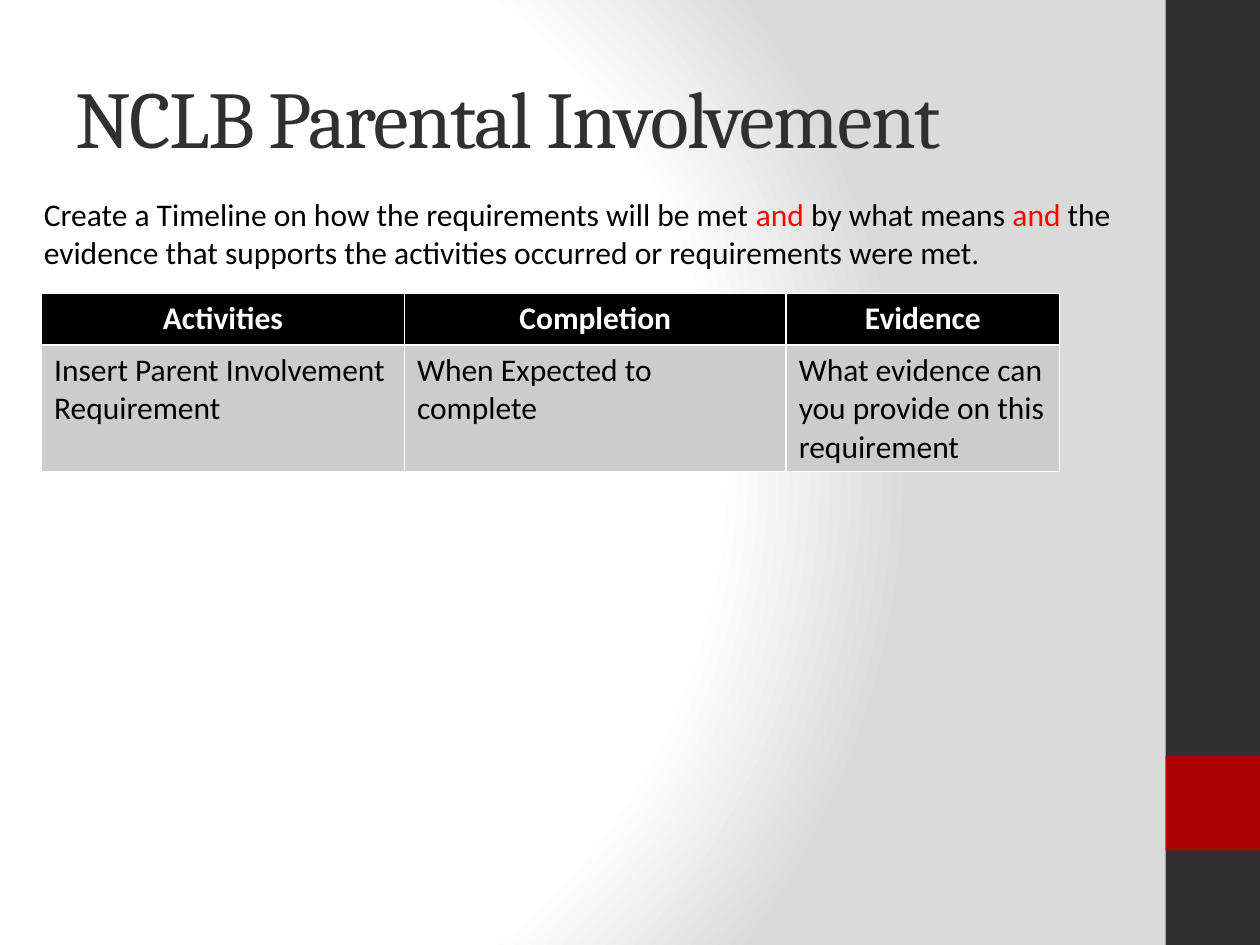
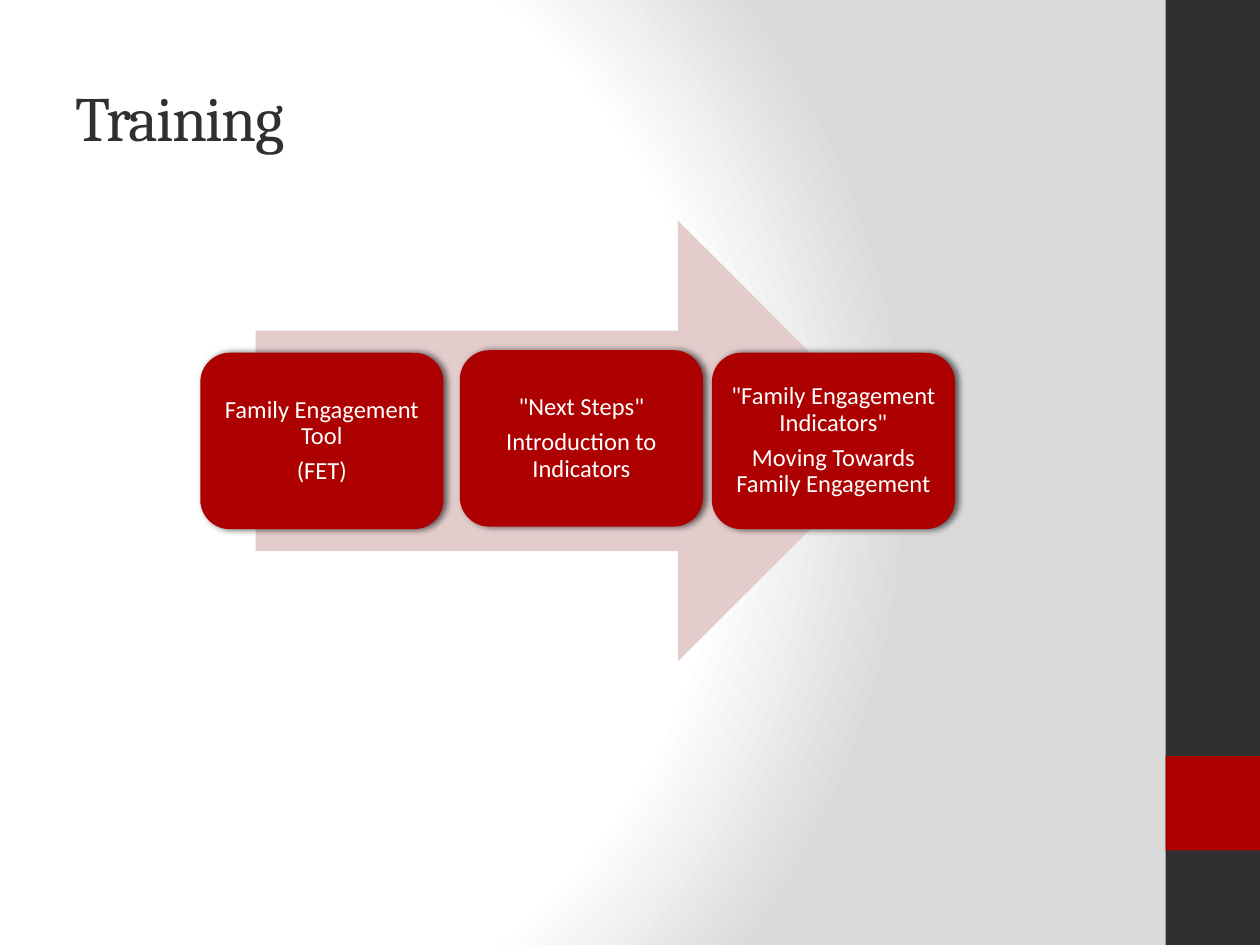
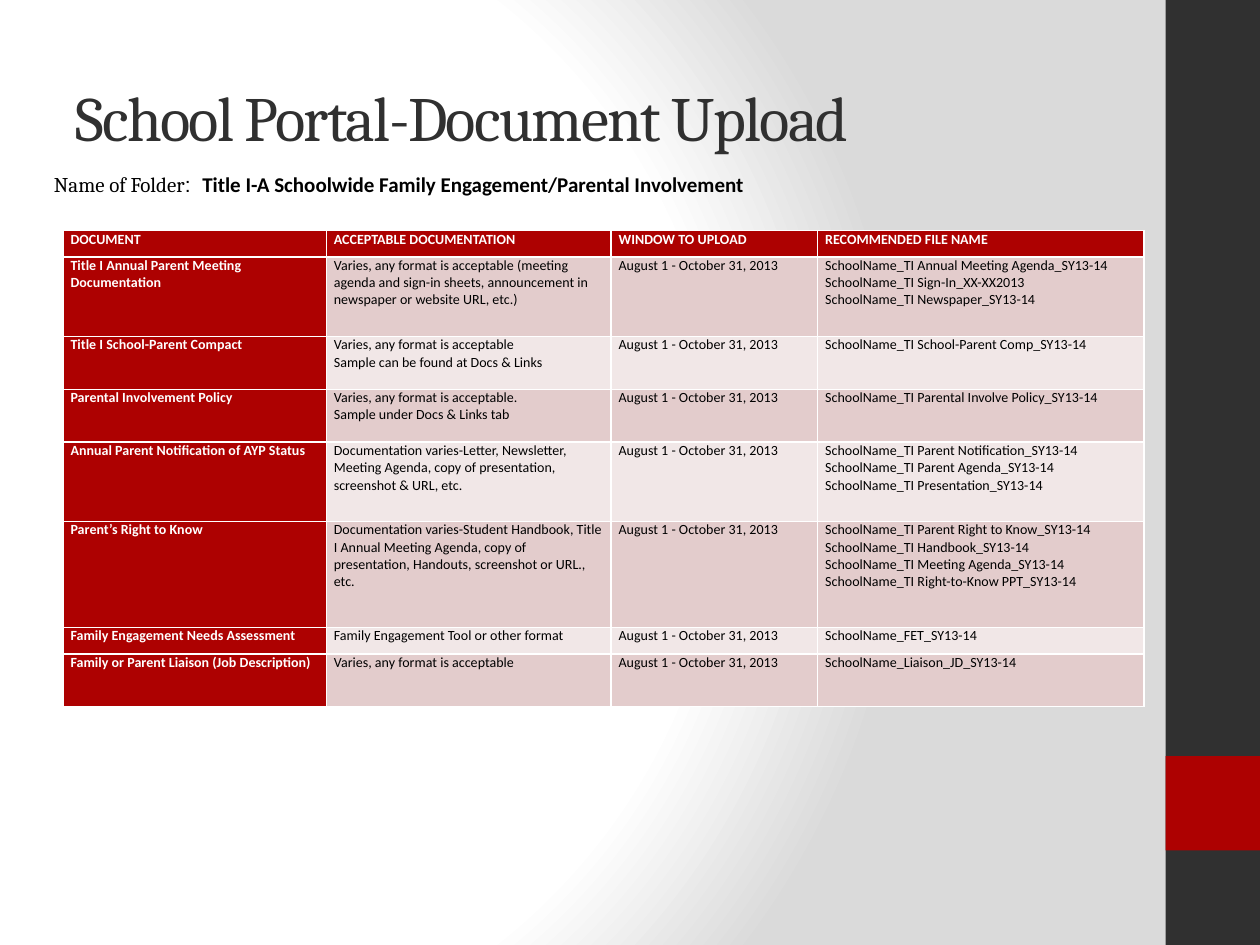
from lxml.etree import SubElement
from pptx import Presentation
from pptx.dml.color import RGBColor
from pptx.enum.shapes import MSO_SHAPE as Preset
from pptx.enum.text import MSO_ANCHOR as Anchor, MSO_AUTO_SIZE as AutoSize, PP_ALIGN as Align
from pptx.oxml import parse_xml
from pptx.oxml.ns import nsdecls, qn
from pptx.util import Inches, Pt

WHITE = RGBColor(0xFF, 0xFF, 0xFF)
BLACK = RGBColor(0x00, 0x00, 0x00)
CHARCOAL = RGBColor(0x30, 0x30, 0x30)
CRIMSON = RGBColor(0xAD, 0x01, 0x01)
RED = RGBColor(0xFF, 0x00, 0x00)
SILVER = RGBColor(0xCC, 0xCC, 0xCC)
MIST = RGBColor(0xDA, 0xDA, 0xDA)
ROSE = RGBColor(0xE3, 0xCC, 0xCC)
BLUSH = RGBColor(0xF1, 0xE7, 0xE7)

WIDTH, HEIGHT = 10, 7.5
BAND = 0.75
TITLE_AREA = (0.5, 0.3, 8.33, 1.25)
GRADIENT = [(0, WHITE), (75, WHITE), (100, MIST)]

PLAIN = {"name": "Calibri", "size": Pt(18), "color": BLACK}
ACCENT = {**PLAIN, "color": RED}
FOLDER = {"name": "Cambria", "size": Pt(12), "color": BLACK}
STEP = {"name": "Calibri", "size": Pt(14), "color": WHITE}

INTRO = [
    ("Create a Timeline on how the requirements will be met ", PLAIN),
    ("and", ACCENT),
    (" by what means ", PLAIN),
    ("and", ACCENT),
    (" the evidence that supports the activities occurred or requirements were met.", PLAIN),
]
TIMELINE = [
    ["Activities", "Completion", "Evidence"],
    ["Insert Parent Involvement Requirement", "When Expected to complete",
     "What evidence can you provide on this requirement"],
]

STEPS = [
    (1.59, 2.8, ["Family Engagement Tool", "(FET)"]),
    (3.65, 2.78, ['"Next Steps"', "Introduction to Indicators"]),
    (5.65, 2.8, ['"Family Engagement Indicators"', "Moving Towards Family Engagement"]),
]

FOLDER_LINE = [
    ("Name of Folder", FOLDER),
    (":  ", {**FOLDER, "name": "Arial"}),
    ("Title I-A Schoolwide Family Engagement/Parental Involvement",
     {**FOLDER, "name": "Calibri", "bold": True}),
]
WINDOW = "August 1 - October 31, 2013"
HEADINGS = ["DOCUMENT", "ACCEPTABLE DOCUMENTATION", "WINDOW TO UPLOAD", "RECOMMENDED FILE NAME"]
UPLOADS = [
    ("Title I Annual Parent Meeting Documentation",
     "Varies, any format is acceptable (meeting agenda and sign-in sheets, "
     "announcement in newspaper or website URL, etc.)",
     "SchoolName_TI Annual Meeting Agenda_SY13-14\nSchoolName_TI Sign-In_XX-XX2013\n"
     "SchoolName_TI Newspaper_SY13-14"),
    ("Title I School-Parent Compact",
     "Varies, any format is acceptable\nSample can be found at Docs & Links",
     "SchoolName_TI School-Parent Comp_SY13-14"),
    ("Parental Involvement Policy",
     "Varies, any format is acceptable.\nSample under Docs & Links tab",
     "SchoolName_TI Parental Involve Policy_SY13-14"),
    ("Annual Parent Notification of AYP Status",
     "Documentation varies-Letter, Newsletter, Meeting Agenda, copy of presentation, "
     "screenshot & URL, etc.",
     "SchoolName_TI Parent Notification_SY13-14\nSchoolName_TI Parent Agenda_SY13-14\n"
     "SchoolName_TI Presentation_SY13-14"),
    ("Parent’s Right to Know",
     "Documentation varies-Student Handbook, Title I Annual Meeting Agenda, "
     "copy of presentation, Handouts, screenshot or URL., etc.",
     "SchoolName_TI Parent Right to Know_SY13-14\nSchoolName_TI Handbook_SY13-14\n"
     "SchoolName_TI Meeting Agenda_SY13-14\nSchoolName_TI Right-to-Know PPT_SY13-14"),
    ("Family Engagement Needs Assessment", "Family Engagement Tool or other format",
     "SchoolName_FET_SY13-14"),
    ("Family or Parent Liaison (Job Description)", "Varies, any format is acceptable",
     "SchoolName_Liaison_JD_SY13-14"),
]
UPLOAD_LINES = [1, 3, 2, 2, 3, 4, 1, 2]
LINE_HEIGHT = 0.21


def inches(values):
    return [Inches(value) for value in values]


def assign(target, values):
    for name, value in values.items():
        setattr(target, name, value)


def add_span(para, text, style):
    span = para.add_run()
    span.text = text
    for name, value in style.items():
        if name == "color":
            span.font.color.rgb = value
        else:
            setattr(span.font, name, value)
    return span


def write_lines(frame, lines, style, layout):
    for index, line in enumerate(lines):
        para = frame.add_paragraph() if index else frame.paragraphs[0]
        assign(para, layout)
        add_span(para, line, style)


def add_figure(page, preset, area, color):
    figure = page.shapes.add_shape(preset, *inches(area))
    figure.shadow.inherit = False
    figure.fill.solid()
    figure.fill.fore_color.rgb = color
    figure.line.fill.background()
    return figure


def add_shadow(figure):
    effects = figure.element.spPr.find(qn("a:effectLst"))
    shadow = SubElement(effects, qn("a:outerShdw"), blurRad=str(Pt(4)), dist=str(Pt(2)),
                        dir="0", algn="ctr", rotWithShape="0")
    color = SubElement(shadow, qn("a:srgbClr"), val=str(BLACK))
    SubElement(color, qn("a:alpha"), val="60000")


def add_text(page, area, spans, anchor=Anchor.TOP):
    frame = page.shapes.add_textbox(*inches(area)).text_frame
    assign(frame, {"word_wrap": True, "auto_size": AutoSize.SHAPE_TO_FIT_TEXT,
                   "vertical_anchor": anchor})
    for text, style in spans:
        add_span(frame.paragraphs[0], text, style)


def add_grid(page, corner, columns, heights, rows, look):
    area = (*corner, sum(columns), sum(heights))
    table = page.shapes.add_table(len(rows), len(columns), *inches(area)).table
    for column, width in zip(table.columns, columns):
        column.width = Inches(width)
    for row, height in zip(table.rows, heights):
        row.height = Inches(height)
    for r, row in enumerate(rows):
        for c, text in enumerate(row):
            fill, style, layout, margins = look(r, c)
            cell = table.cell(r, c)
            assign(cell, margins)
            cell.fill.solid()
            cell.fill.fore_color.rgb = fill
            write_lines(cell.text_frame, text.split("\n"), style, layout)


def timeline_look(row, column):
    heading = row == 0
    style = {**PLAIN, "color": WHITE if heading else BLACK, "bold": heading}
    layout = {"alignment": Align.CENTER if heading else Align.LEFT}
    return (BLACK if heading else SILVER), style, layout, {}


def upload_look(row, column):
    heading = row == 0 or column == 0
    fill = CRIMSON if heading else (ROSE if row % 2 else BLUSH)
    style = {"name": "Calibri", "size": Pt(8), "color": WHITE if heading else BLACK,
             "bold": heading}
    side = Inches(0.06)
    margins = {"margin_left": side, "margin_right": side, "margin_top": 0, "margin_bottom": 0}
    return fill, style, {}, margins


def style_master(deck, layout, page):
    master = deck.slide_master
    stops = "".join(f'<a:gs pos="{share * 1000}"><a:srgbClr val="{color}"/></a:gs>'
                    for share, color in GRADIENT)
    backdrop = parse_xml(
        f'<p:bg {nsdecls("p", "a")}><p:bgPr><a:gradFill rotWithShape="1">'
        f'<a:gsLst>{stops}</a:gsLst><a:path path="circle">'
        '<a:fillToRect l="20000" t="50000" r="100000" b="50000"/></a:path>'
        '</a:gradFill><a:effectLst/></p:bgPr></p:bg>')
    content = master.element.cSld
    for old in content.findall(qn("p:bg")):
        content.remove(old)
    content.insert(0, backdrop)
    left = WIDTH - BAND
    bands = [((left, 0, BAND, HEIGHT), CHARCOAL),
             ((left, HEIGHT - 2 * BAND, BAND, BAND), CRIMSON)]
    for index, (area, color) in enumerate(bands):
        band = add_figure(page, Preset.RECTANGLE, area, color)
        master.shapes.element.insert(2 + index, band.element)
    title = next(holder for holder in layout.placeholders if holder.placeholder_format.idx == 0)
    assign(title, dict(zip(("left", "top", "width", "height"), inches(TITLE_AREA))))


def set_title(page, text, size):
    frame = page.shapes.title.text_frame
    assign(frame, {"vertical_anchor": Anchor.MIDDLE, "auto_size": AutoSize.NONE,
                   "word_wrap": True})
    para = frame.paragraphs[0]
    para.alignment = Align.LEFT
    span = add_span(para, text, {"name": "Cambria", "size": Pt(size), "color": CHARCOAL})
    span.font._element.set("spc", "-100")


def build_timeline(page):
    set_title(page, "NCLB Parental Involvement", 46)
    add_text(page, (0.25, 1.5, 8.67, 0.71), INTRO)
    add_grid(page, (0.33, 2.33), [2.88, 3.03, 2.17], [0.41, 1], TIMELINE, timeline_look)


def build_training(page):
    set_title(page, "Training", 36)
    add_figure(page, Preset.RIGHT_ARROW, (2.03, 1.75, 5.1, 3.5), ROSE)
    inset = Inches(0.06)
    for left, top, lines in STEPS:
        box = add_figure(page, Preset.ROUNDED_RECTANGLE, (left, top, 1.93, 1.4), CRIMSON)
        add_shadow(box)
        frame = box.text_frame
        assign(frame, {"word_wrap": True, "vertical_anchor": Anchor.MIDDLE,
                       "margin_left": inset, "margin_right": inset,
                       "margin_top": inset, "margin_bottom": inset})
        write_lines(frame, lines, STEP, {"alignment": Align.CENTER, "line_spacing": 0.9,
                                         "space_after": Pt(5)})


def build_upload(page):
    set_title(page, "School Portal-Document Upload", 36)
    add_text(page, (0.33, 1.31, 7.92, 0.3), FOLDER_LINE, Anchor.MIDDLE)
    rows = [HEADINGS] + [[document, proof, WINDOW, files] for document, proof, files in UPLOADS]
    heights = [lines * LINE_HEIGHT for lines in UPLOAD_LINES]
    add_grid(page, (0.5, 1.83), [2.09, 2.26, 1.64, 2.59], heights, rows, upload_look)


def main():
    deck = Presentation()
    deck.slide_width, deck.slide_height = inches((WIDTH, HEIGHT))
    layout = deck.slide_layouts.get_by_name("Title Only")
    builders = [build_timeline, build_training, build_upload]
    pages = [deck.slides.add_slide(layout) for _ in builders]
    style_master(deck, layout, pages[0])
    for build, page in zip(builders, pages):
        build(page)
    deck.save("out.pptx")


if __name__ == "__main__":
    main()
